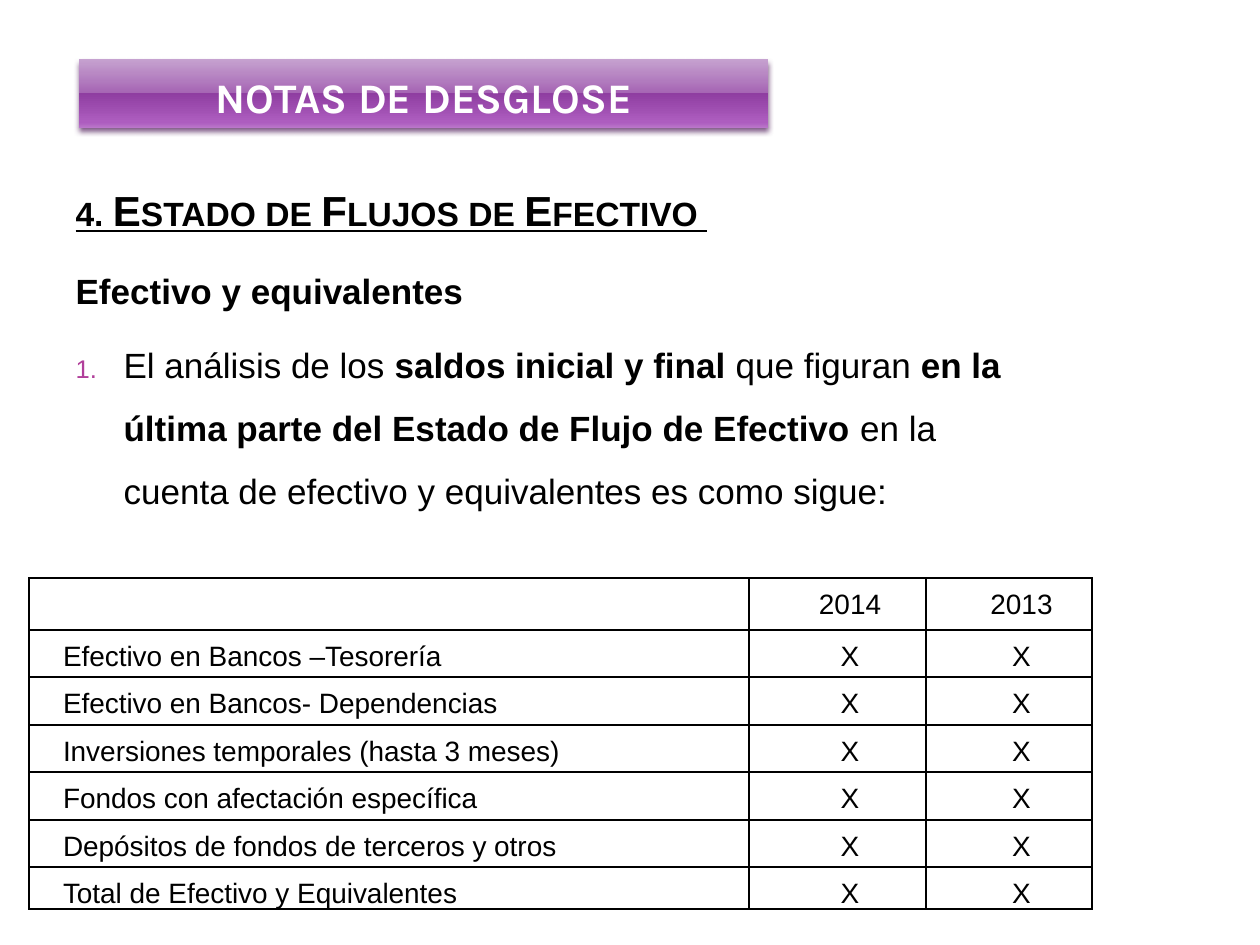
from pptx import Presentation
from pptx.dml.color import RGBColor
from pptx.enum.shapes import MSO_SHAPE
from pptx.enum.text import MSO_ANCHOR, MSO_AUTO_SIZE, PP_ALIGN
from pptx.oxml import parse_xml
from pptx.oxml.ns import nsdecls
from pptx.util import Pt

PX = 914400 // 126
COLORS = {"text": "000000", "white": "FFFFFF", "number": "B13F9A", "shadow": "6A3F73"}
BANNER_STOPS = [(0, "C6A2D0"), (49, "A666B4"), (49, "8F3EA1"), (92, "AD5DBF"), (100, "BA76CA")]


def add_xml(parent, xml):
    head, tail = xml.split(">", 1)
    close = "/" if head.endswith("/") else ""
    parent.append(parse_xml(f"{head.rstrip('/')} {nsdecls('a')}{close}>{tail}"))


def style(p, size, color="text", name="Arial", bold=None):
    p.font.size = Pt(size)
    p.font.name = name
    p.font.bold = bold
    p.font.color.rgb = RGBColor.from_string(COLORS[color])


prs = Presentation()
prs.slide_width, prs.slide_height = 1260 * PX, 945 * PX
s = prs.slides.add_slide(prs.slide_layouts[1])
title = s.shapes.title
title.element.getparent().remove(title.element)

body = s.placeholders[1]
body.left, body.top, body.width, body.height = 63 * PX, 178 * PX, 998 * PX, 693 * PX
tf = body.text_frame
tf.auto_size = MSO_AUTO_SIZE.NONE
paragraphs = [
    (24, 0, 38, [("4. Estado de Flujos de Efectivo ", True)]),
    (20, 20, 38, [("Efectivo y equivalentes", True)]),
    (20, 6, 48, [
        ("El análisis de los ", False),
        ("saldos inicial y final ", True),
        ("que figuran ", False),
        ("en la última parte del Estado de Flujo de Efectivo", True),
        (" en la cuenta de efectivo y equivalentes es como sigue:", False),
    ]),
]
for i, (size, before, indent, runs) in enumerate(paragraphs):
    p = tf.paragraphs[0] if i == 0 else tf.add_paragraph()
    numbered = len(runs) > 1
    pPr = p._p.get_or_add_pPr()
    pPr.set("marL", str(indent * PX))
    pPr.set("indent", str(-indent * PX))
    p.space_before = Pt(before)
    if numbered:
        p.line_spacing = 1.5
        add_xml(pPr, f'<a:buClr><a:srgbClr val="{COLORS["number"]}"/></a:buClr>')
        add_xml(pPr, '<a:buSzPct val="73000"/>')
        add_xml(pPr, '<a:buFont typeface="Arial"/>')
        add_xml(pPr, '<a:buAutoNum type="arabicPeriod"/>')
    else:
        add_xml(pPr, "<a:buNone/>")
    style(p, size, bold=None if numbered else True)
    for text, bold in runs:
        r = p.add_run()
        r.text = text
        if numbered:
            r.font.bold = bold
heading = tf.paragraphs[0].runs[0]
heading.font.underline = True
heading.font._element.set("cap", "small")

banner = s.shapes.add_shape(MSO_SHAPE.RECTANGLE, 79 * PX, 59 * PX, 689 * PX, 69 * PX)
banner.line.fill.background()
banner.fill.gradient()
banner.fill.gradient_angle = 270
stops = banner._element.spPr.find(".//{*}gsLst")
stops.clear()
for pos, color in BANNER_STOPS:
    add_xml(stops, f'<a:gs pos="{pos * 1000}"><a:srgbClr val="{color}"/></a:gs>')
banner.shadow.inherit = False
add_xml(banner._element.spPr.find("{*}effectLst"),
        '<a:outerShdw blurRad="39370" dist="25400" dir="5400000">'
        f'<a:srgbClr val="{COLORS["shadow"]}"><a:alpha val="83000"/></a:srgbClr></a:outerShdw>')
tf = banner.text_frame
tf.word_wrap = True
tf.vertical_anchor = MSO_ANCHOR.BOTTOM
p = tf.paragraphs[0]
p.text = "NOTAS DE DESGLOSE"
p.alignment = PP_ALIGN.CENTER
style(p, 24, "white", "Karla", True)

concepts = [
    "Efectivo en Bancos –Tesorería",
    "Efectivo en Bancos- Dependencias",
    "Inversiones temporales (hasta 3 meses)",
    "Fondos con afectación específica",
    "Depósitos de fondos de terceros y otros",
    "Total de Efectivo y Equivalentes",
]
rows = [["", "2014", "2013"]] + [[concept, "X", "X"] for concept in concepts]
col_widths = [720, 177, 166]
row_heights = [48, 47] * 3 + [42]
table = s.shapes.add_table(len(rows), 3, 29 * PX, 578 * PX,
                           sum(col_widths) * PX, sum(row_heights) * PX).table
table.first_row = table.horz_banding = False
for col, width in zip(table.columns, col_widths):
    col.width = width * PX
for row, height, texts in zip(table.rows, row_heights, rows):
    row.height = height * PX
    for j, (cell, text) in enumerate(zip(row.cells, texts)):
        cell.margin_left = cell.margin_right = 9 * PX
        cell.margin_top, cell.margin_bottom = 21 * PX, 0
        p = cell.text_frame.paragraphs[0]
        p.text = text
        p.alignment = PP_ALIGN.CENTER if j else PP_ALIGN.JUSTIFY
        p.line_spacing = Pt(12)
        p._p.get_or_add_pPr().set("indent", str(25 * PX))
        style(p, 16)
        tcPr = cell._tc.get_or_add_tcPr()
        for side in ("lnL", "lnR", "lnT", "lnB"):
            add_xml(tcPr, f'<a:{side} w="12700"><a:solidFill><a:srgbClr val="{COLORS["text"]}"/>'
                          f'</a:solidFill></a:{side}>')
        cell.fill.background()

prs.save("out.pptx")
